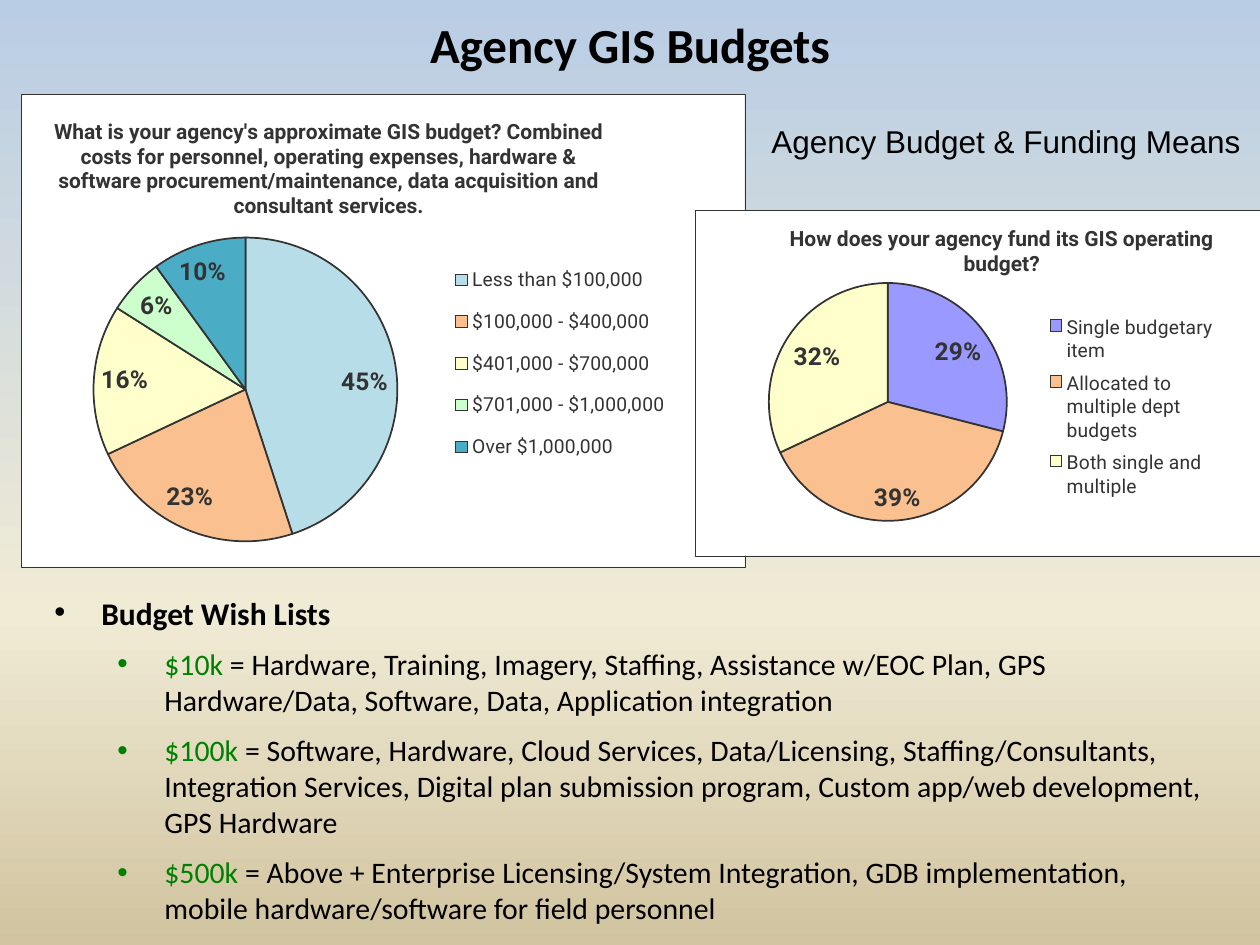
"""Build the Agency GIS Budgets slide with two pie charts and a wish list."""
from copy import deepcopy
from pptx import Presentation
from pptx.chart.data import CategoryChartData
from pptx.dml.color import RGBColor
from pptx.enum.chart import XL_CHART_TYPE, XL_LABEL_POSITION, XL_LEGEND_POSITION
from pptx.enum.text import MSO_ANCHOR, PP_ALIGN
from pptx.oxml import parse_xml
from pptx.oxml.ns import nsdecls, qn
from pptx.util import Emu, Pt


def px(count):
    return Emu(round(count * 914400 / 126))


def style(font, name, size, color, bold=False):
    font.name, font.size, font.bold = name, Pt(size), bold
    font.color.rgb = RGBColor.from_string(color)


deck = Presentation()
deck.slide_width, deck.slide_height = px(1260), px(945)
slide = deck.slides.add_slide(deck.slide_layouts[5])

back = slide.background.fill
back.gradient()
back.gradient_angle = 270
stops = slide.element.find(".//" + qn("a:gsLst"))
for stop in list(stops):
    stops.remove(stop)
for place, color in [(0, "B9CDE5"), (65, "F0EBD5"), (100, "D1C39F")]:
    stops.append(parse_xml(
        f'<a:gs {nsdecls("a")} pos="{place * 1000}"><a:srgbClr val="{color}"/></a:gs>'))

title = slide.shapes.title
title.left, title.top, title.width, title.height = px(21), px(10), px(1218), px(73)
frame = title.text_frame
frame.text = "Agency GIS Budgets"
frame.vertical_anchor = MSO_ANCHOR.MIDDLE
line = frame.paragraphs[0]
line.alignment, line.line_spacing = PP_ALIGN.CENTER, 0.95
style(line.runs[0].font, "Calibri", 28, "000000", True)

wishes = [
    ("", "Budget Wish Lists"),
    ("$10k ", "= Hardware, Training, Imagery, Staffing, Assistance w/EOC Plan, GPS "
     "Hardware/Data, Software, Data, Application integration"),
    ("$100k ", "= Software, Hardware, Cloud Services, Data/Licensing, Staffing/Consultants, "
     "Integration Services, Digital plan submission program, Custom app/web development, "
     "GPS Hardware"),
    ("$500k ", "= Above + Enterprise Licensing/System Integration, GDB implementation, "
     "mobile hardware/software for field personnel"),
]
frame = slide.shapes.add_textbox(px(42), px(598), px(1187), px(347)).text_frame
frame.word_wrap = True
for rank, (amount, items) in enumerate(wishes):
    line = frame.add_paragraph() if rank else frame.paragraphs[0]
    if amount:
        line.level, line.space_before = 1, Pt(8.5)
        run = line.add_run()
        run.text = amount
        style(run.font, "Calibri", 17, "008000")
    else:
        line.line_spacing = 0.7
    run = line.add_run()
    run.text = items
    style(run.font, "Calibri", 17 if amount else 18, "000000", not amount)
    props = line._p.get_or_add_pPr()
    props.set("marL", str(px(110 if amount else 47)))
    props.set("indent", str(px(-47)))
    props.append(parse_xml(f'<a:buFont {nsdecls("a")} typeface="Arial"/>'))
    props.append(parse_xml(f'<a:buChar {nsdecls("a")} char="•"/>'))

charts = [
    dict(
        box=(21, 94, 724, 473),
        title="What is your agency's approximate GIS budget? Combined costs for personnel, "
              "operating expenses, hardware & software procurement/maintenance, data "
              "acquisition and consultant services.",
        data=[("Less than $100,000", 45, "B7DEE8"), ("$100,000 - $400,000", 23, "FAC090"),
              ("$401,000 - $700,000", 16, "FFFFCC"), ("$701,000 - $1,000,000", 6, "CCFFCC"),
              ("Over $1,000,000", 10, "4BACC6")],
        head=(0.04, 0.04), plot=(0.1, 0.27, 0.42, 0.71), key=(0.58, 0.33, 0.33, 0.48),
        shifts=[(1, -0.03, -0.02), (4, -0.03, 0.01)]),
    dict(
        box=(695, 210, 567, 346),
        title="How does your agency fund its GIS operating budget?",
        data=[("Single budgetary item", 29, "9999FF"),
              ("Allocated to multiple dept budgets", 39, "FAC090"),
              ("Both single and multiple", 32, "FFFFCC")],
        head=(0.16, 0.03), plot=(0.13, 0.2, 0.42, 0.71), key=(0.61, 0.28, 0.32, 0.58),
        shifts=[(0, 0.01, 0.01), (1, 0.04, 0)]),
]
for part in charts:
    names, values, colors = zip(*part["data"])
    data = CategoryChartData()
    data.categories = names
    data.add_series("Series 1", values)
    chart = slide.shapes.add_chart(
        XL_CHART_TYPE.PIE, *map(px, part["box"]), data).chart
    style(chart.font, "Roboto", 10, "333333")
    chart.has_title = True
    head = chart.chart_title.text_frame
    head.text = part["title"]
    style(head.paragraphs[0].runs[0].font, "Roboto", 12, "333333", True)
    chart.has_legend = True
    chart.legend.position = XL_LEGEND_POSITION.RIGHT
    chart.legend.include_in_layout = False
    style(chart.legend.font, "Roboto", 11, "333333")

    pie = chart.plots[0]
    pie.vary_by_categories = True
    series = pie.series[0]
    for rank, color in enumerate(colors):
        wedge = series.points[rank].format
        wedge.fill.solid()
        wedge.fill.fore_color.rgb = RGBColor.from_string(color)
        wedge.line.color.rgb = RGBColor.from_string("333333")
        wedge.line.width = Pt(1)
    labels = series.data_labels
    labels.show_percentage, labels.show_value = True, False
    labels.number_format, labels.number_format_is_linked = "0%", False
    labels.position = XL_LABEL_POSITION.INSIDE_END
    style(labels.font, "Roboto", 14, "333333", True)
    group = series._element.find(qn("c:dLbls"))
    shared = [deepcopy(node) for node in group if node.tag != qn("c:showLeaderLines")]
    for index, (rank, right, down) in enumerate(part["shifts"]):
        label = parse_xml(
            f'<c:dLbl {nsdecls("c")}><c:idx val="{rank}"/><c:layout><c:manualLayout>'
            f'<c:x val="{right}"/><c:y val="{down}"/></c:manualLayout></c:layout></c:dLbl>')
        label.extend(deepcopy(shared))
        group.insert(index, label)

    root = chart.element.find(qn("c:chart"))
    root.addnext(parse_xml(
        f'<c:spPr {nsdecls("c", "a")}><a:solidFill><a:srgbClr val="FFFFFF"/></a:solidFill>'
        '<a:ln w="3175"><a:solidFill><a:srgbClr val="333333"/></a:solidFill></a:ln></c:spPr>'))
    for tag, index, place in [("c:title", 1, part["head"]), ("c:plotArea", 0, part["plot"]),
                              ("c:legend", 1, part["key"])]:
        node = root.find(qn(tag))
        for old in node.findall(qn("c:layout")):
            node.remove(old)
        target = '<c:layoutTarget val="inner"/>' if tag == "c:plotArea" else ""
        modes = '<c:xMode val="edge"/><c:yMode val="edge"/>'
        sizes = "".join(f'<c:{side} val="{size}"/>' for side, size in zip("xywh", place))
        node.insert(index, parse_xml(
            f'<c:layout {nsdecls("c")}><c:manualLayout>{target}{modes}{sizes}'
            '</c:manualLayout></c:layout>'))

note = slide.shapes.add_textbox(px(759), px(116), px(501), px(50)).text_frame
note.word_wrap = False
note.text = "Agency Budget & Funding Means"
style(note.paragraphs[0].runs[0].font, "Arial", 18, "000000")

deck.save("out.pptx")
